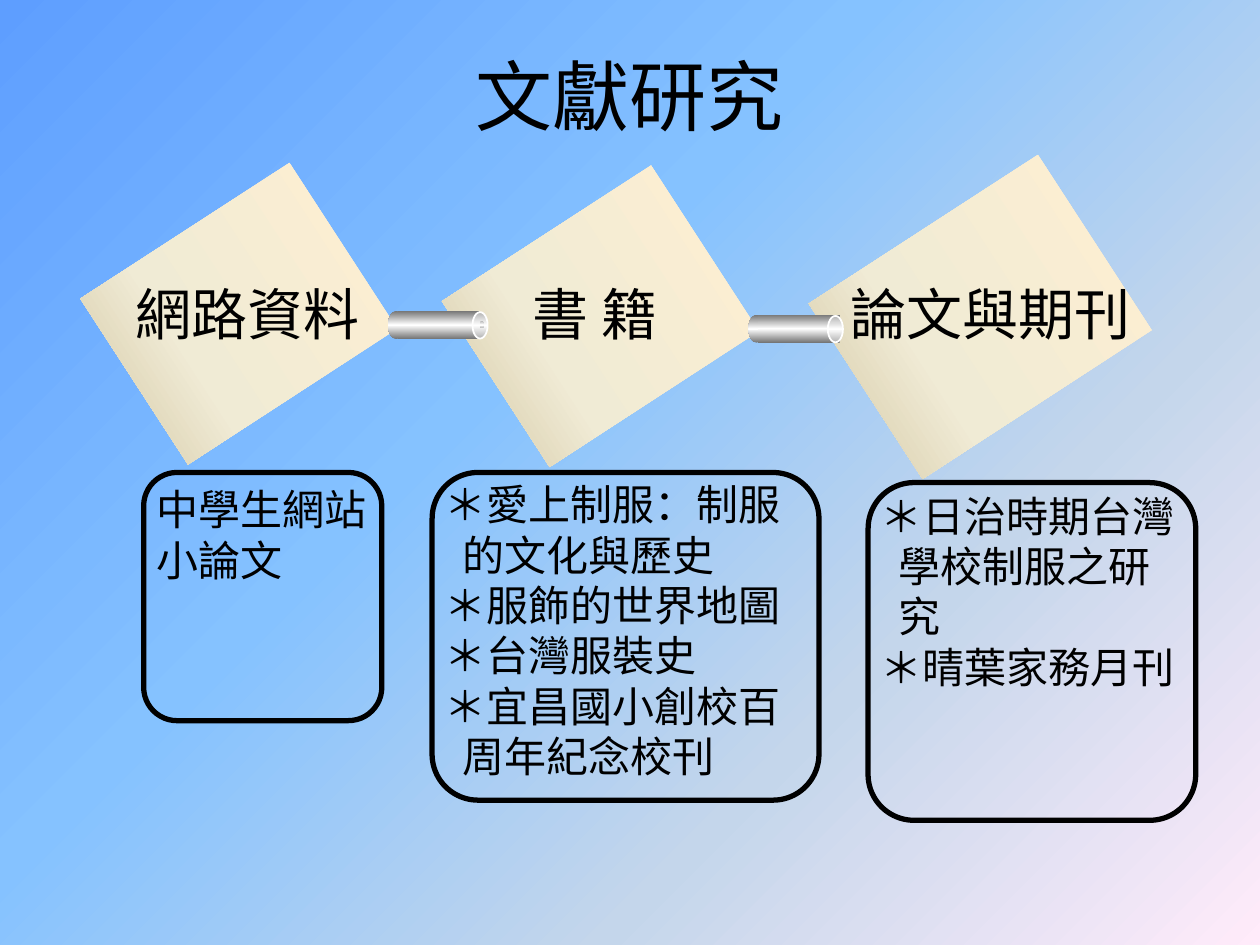
from collections import namedtuple

from lxml.etree import SubElement
from pptx import Presentation
from pptx.dml.color import RGBColor
from pptx.enum.shapes import MSO_SHAPE
from pptx.enum.text import MSO_ANCHOR, PP_ALIGN
from pptx.oxml.ns import qn
from pptx.util import Inches, Pt

SLIDE_W, SLIDE_H = Inches(10), Inches(7.5)
FONT = "Noto Sans CJK SC"
COLORS = {"ink": "000000", "rim": "FFFFFF"}
GRADIENTS = {
    "sky": ([(0, "5E9EFF"), (40, "85C2FF"), (70, "C4D6EB"), (100, "FFEBFA")], 45),
    "parchment": ([(0, "FFEFD1"), (65, "F0EBD5"), (100, "D1C39F")], 90),
    "steel": ([(0, "767676"), (50, "FFFFFF"), (100, "767676")], 90),
    "mouth": ([(0, "B3B3B3"), (50, "FFFFFF"), (100, "B3B3B3")], 90),
}

# All lengths are percentages of the slide's width (x, w) and height (y, h).
Box = namedtuple("Box", "x y w h")

TITLE_BOX = Box(5, 1.73, 90, 16.67)
LABEL_Y, LABEL_H = 28.93, 8.53
SOURCES = [
    {"label": "網路資料", "label_x": 9.8, "label_w": 22,
     "card": Box(11.1, 20, 15.7, 26.4),
     "frame": Box(11.4, 50, 18.9, 26.27),
     "notes_w": 20.5, "notes_drop": 0.53,
     "notes": [("中學生網站小論文", False)]},
    {"label": "書 籍", "label_x": 41.3, "label_w": 13.4,
     "card": Box(39.8, 20.27, 15.7, 26.4),
     "frame": Box(34.3, 50, 30.7, 34.67),
     "notes_w": 29.1, "notes_drop": 0,
     "notes": [("＊愛上制服：制服", False), ("的文化與歷史", True),
               ("＊服飾的世界地圖", False), ("＊台灣服裝史", False),
               ("＊宜昌國小創校百", False), ("周年紀念校刊", True)]},
    {"label": "論文與期刊", "label_x": 66.5, "label_w": 29.9,
     "card": Box(69.5, 19.07, 16.6, 28.93),
     "frame": Box(68.9, 51.07, 26, 35.73),
     "notes_w": 28, "notes_drop": 0.13,
     "notes": [("＊日治時期台灣", False), ("學校制服之研", True),
               ("究", True), ("＊晴葉家務月刊", False)]},
]
TUBES = [(Box(30.8, 32.93, 7.9, 2.93), True), (Box(59.4, 33.33, 7.5, 2.93), False)]


def rgb(name):
    return RGBColor.from_string(COLORS[name])


def to_emu(box):
    return (int(SLIDE_W * box.x / 100), int(SLIDE_H * box.y / 100),
            int(SLIDE_W * box.w / 100), int(SLIDE_H * box.h / 100))


def set_gradient(fill, name, owner):
    """Fill with a named gradient; owner is the XML element that holds the fill."""
    stops, angle = GRADIENTS[name]
    fill.gradient()
    grad = owner.find(".//" + qn("a:gradFill"))
    for child in list(grad):
        grad.remove(child)
    stop_list = SubElement(grad, qn("a:gsLst"))
    for position, color in stops:
        stop = SubElement(stop_list, qn("a:gs"), pos=str(position * 1000))
        SubElement(stop, qn("a:srgbClr"), val=color)
    SubElement(grad, qn("a:lin"), ang=str(angle * 60000), scaled="0")
    grad.set("rotWithShape", "1")


def add_figure(shapes, preset, box, gradient=None, line=None, line_pt=1):
    figure = shapes.add_shape(preset, *to_emu(box))
    figure.shadow.inherit = False
    if gradient:
        set_gradient(figure.fill, gradient, figure.element.spPr)
    else:
        figure.fill.background()
    if line:
        figure.line.color.rgb = rgb(line)
        figure.line.width = Pt(line_pt)
    else:
        figure.line.fill.background()
    return figure


def add_text(slide, box, lines, size, align=PP_ALIGN.LEFT, anchor=MSO_ANCHOR.TOP):
    """Write (wording, indented) lines, one paragraph each."""
    frame = slide.shapes.add_textbox(*to_emu(box)).text_frame
    frame.word_wrap = True
    frame.vertical_anchor = anchor
    for index, (wording, indented) in enumerate(lines):
        paragraph = frame.add_paragraph() if index else frame.paragraphs[0]
        paragraph.alignment = align
        if indented:
            paragraph._p.get_or_add_pPr().set("marL", str(Inches(0.14)))
        run = paragraph.add_run()
        run.text = wording
        for key, value in {"size": Pt(size), "name": FONT}.items():
            setattr(run.font, key, value)
        run.font.color.rgb = rgb("ink")
        SubElement(run._r.get_or_add_rPr(), qn("a:ea"), typeface=FONT)


def add_source(slide, source):
    """A tilted card with its label, above a rounded frame of notes."""
    frame = source["frame"]
    outline = add_figure(slide.shapes, MSO_SHAPE.ROUNDED_RECTANGLE, frame,
                         line="ink", line_pt=3)
    outline.adjustments[0] = 0.14
    card = add_figure(slide.shapes, MSO_SHAPE.RECTANGLE, source["card"], "parchment")
    card.rotation = 57
    add_text(slide, Box(source["label_x"], LABEL_Y, source["label_w"], LABEL_H),
             [(source["label"], False)], 32)
    notes_box = Box(frame.x, frame.y + source["notes_drop"], source["notes_w"],
                    6.73 * len(source["notes"]))
    add_text(slide, notes_box, source["notes"], 24)


def add_tube(slide, box, has_hole):
    shapes = slide.shapes.add_group_shape().shapes
    mouth = Box(box.x + box.w - 1.2, box.y + 0.1, 1.2, box.h - 0.13)
    add_figure(shapes, MSO_SHAPE.OVAL, box._replace(w=1.3), "steel")
    add_figure(shapes, MSO_SHAPE.RECTANGLE, box._replace(x=box.x + 0.75, w=6.5), "steel")
    add_figure(shapes, MSO_SHAPE.OVAL, mouth, "mouth", line="rim")
    if has_hole:
        hole = Box(mouth.x + mouth.w / 2, mouth.y + mouth.h / 3, 0.3, 0.8)
        add_figure(shapes, MSO_SHAPE.OVAL, hole, "mouth")


def main():
    deck = Presentation()
    deck.slide_width, deck.slide_height = SLIDE_W, SLIDE_H
    slide = deck.slides.add_slide(deck.slide_layouts[6])
    set_gradient(slide.background.fill, "sky", slide.element)
    add_text(slide, TITLE_BOX, [("文獻研究", False)], 44,
             PP_ALIGN.CENTER, MSO_ANCHOR.MIDDLE)
    for source in SOURCES:
        add_source(slide, source)
    for box, has_hole in TUBES:
        add_tube(slide, box, has_hole)
    deck.save("out.pptx")


if __name__ == "__main__":
    main()
